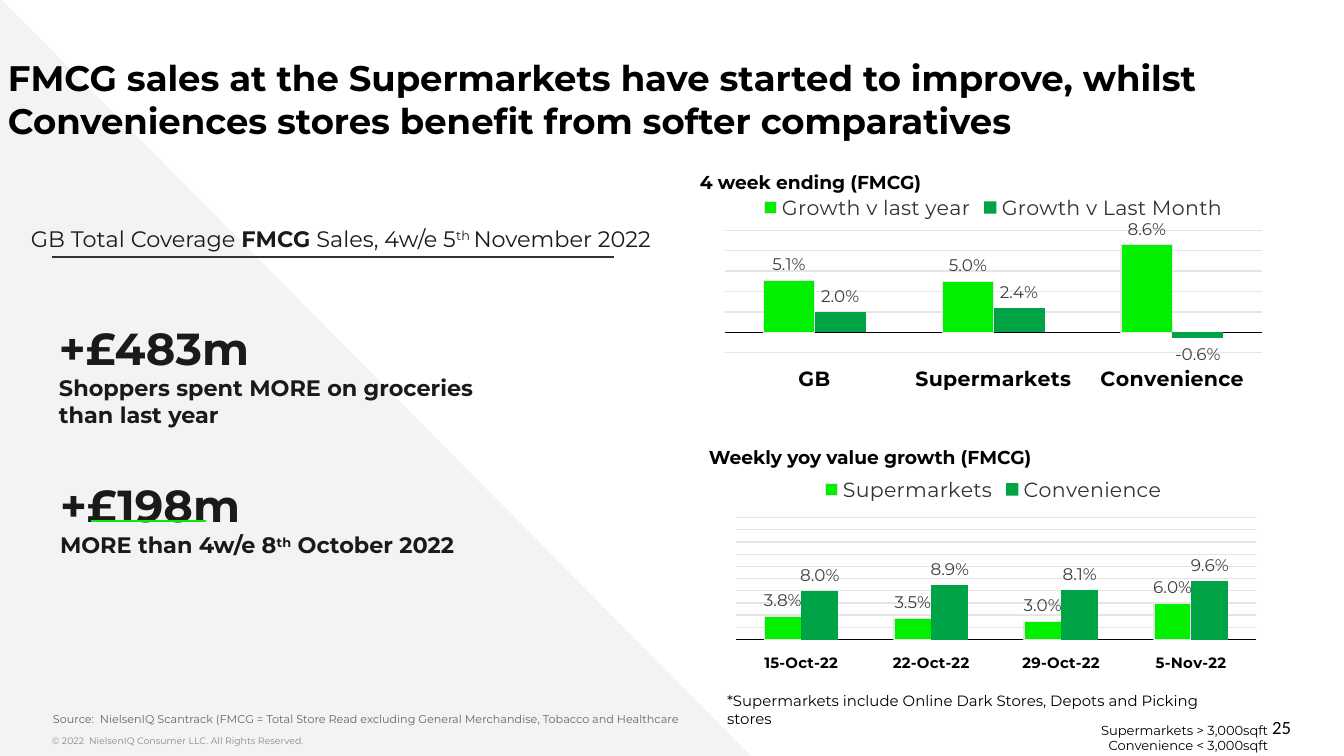
"""Build the FMCG sales slide: headline figures on the left, two growth charts on the right."""
import pptx
import pptx.chart.data
import pptx.dml.color
import pptx.enum.chart
import pptx.enum.shapes
import pptx.enum.text
import pptx.oxml
import pptx.oxml.ns
import pptx.util
from lxml import etree

SCALE = 914400 / 134.4
RGB = pptx.dml.color.RGBColor
BLACK = RGB(0x00, 0x00, 0x00)
INK = RGB(0x1A, 0x1A, 0x1A)
CHARCOAL = RGB(0x33, 0x33, 0x33)
LABEL = RGB(0x40, 0x40, 0x40)
SOURCE = RGB(0x66, 0x66, 0x66)
COPYRIGHT = RGB(0x88, 0x88, 0x88)
GRID = RGB(0xE5, 0xE5, 0xE5)
PALE = RGB(0xF3, 0xF3, 0xF3)
LIME = RGB(0x00, 0xF0, 0x00)
GREEN = RGB(0x00, 0xA3, 0x46)
TOP = pptx.enum.text.MSO_ANCHOR.TOP
MIDDLE = pptx.enum.text.MSO_ANCHOR.MIDDLE
LEFT = pptx.enum.text.PP_ALIGN.LEFT
RIGHT = pptx.enum.text.PP_ALIGN.RIGHT
SUPER = "super"


def px(*lengths):
    return [pptx.util.Emu(round(length * SCALE)) for length in lengths]


def set_font(font, size, color, bold=False, name="Montserrat"):
    values = {"size": pptx.util.Pt(size), "bold": bold, "name": name}
    for key, value in values.items():
        setattr(font, key, value)
    font.color.rgb = color


deck = pptx.Presentation()
deck.slide_width, deck.slide_height = px(1344, 756)
page = deck.slides.add_slide(deck.slide_layouts[6])

triangle = page.shapes.add_shape(
    pptx.enum.shapes.MSO_SHAPE.RIGHT_TRIANGLE, *px(0, -2, 751, 758))
triangle.shadow.inherit = False
triangle.fill.solid()
triangle.fill.fore_color.rgb = PALE
triangle.line.fill.background()

charts = [
    {
        "place": (714, 179, 559, 218),
        "categories": ["GB", "Supermarkets", "Convenience"],
        "series": [("Growth v last year", [0.051, 0.05, 0.086]),
                   ("Growth v Last Month", [0.02, 0.024, -0.006])],
        "category size": 11, "maximum": None, "plot": {},
    },
    {
        "place": (714, 461, 559, 218),
        "categories": ["15-Oct-22", "22-Oct-22", "29-Oct-22", "5-Nov-22"],
        "series": [("Supermarkets", [0.038, 0.035, 0.03, 0.06]),
                   ("Convenience", [0.08, 0.089, 0.081, 0.096])],
        "category size": 8, "maximum": 0.2,
        "plot": {"x": 0.04, "y": 0.26, "w": 0.93, "h": 0.56},
    },
]
for item in charts:
    data = pptx.chart.data.CategoryChartData(number_format="0.0%")
    data.categories = item["categories"]
    for name, values in item["series"]:
        data.add_series(name, values)
    chart = page.shapes.add_chart(
        pptx.enum.chart.XL_CHART_TYPE.COLUMN_CLUSTERED, *px(*item["place"]), data).chart
    set_font(chart.font, 10, BLACK, name="Arial")
    chart.has_title = False
    chart.has_legend = True
    chart.legend.position = pptx.enum.chart.XL_LEGEND_POSITION.TOP
    chart.legend.include_in_layout = False
    set_font(chart.legend.font, 11, CHARCOAL)

    category = chart.category_axis
    category.tick_label_position = pptx.enum.chart.XL_TICK_LABEL_POSITION.LOW
    category.major_tick_mark = pptx.enum.chart.XL_TICK_MARK.NONE
    category.format.line.color.rgb = BLACK
    category.format.line.width = pptx.util.Pt(0.75)
    set_font(category.tick_labels.font, item["category size"], BLACK, True)

    value_axis = chart.value_axis
    value_axis.visible = False
    value_axis.maximum_scale = item["maximum"]
    value_axis.major_gridlines.format.line.color.rgb = GRID
    value_axis.major_gridlines.format.line.width = pptx.util.Pt(0.75)

    plot = chart.plots[0]
    plot.vary_by_categories = False
    plot.gap_width = 150
    plot.overlap = 0
    for series, color in zip(plot.series, (LIME, GREEN)):
        series.invert_if_negative = False
        series.format.fill.solid()
        series.format.fill.fore_color.rgb = color
        labels = series.data_labels
        settings = {"show_value": True, "number_format": "0.0%",
                    "number_format_is_linked": False,
                    "position": pptx.enum.chart.XL_LABEL_POSITION.OUTSIDE_END}
        for key, value in settings.items():
            setattr(labels, key, value)
        set_font(labels.font, 9, LABEL)
    plot.series[0].format.line.color.rgb = GRID
    plot.series[0].format.line.width = pptx.util.Pt(0.75)

    if item["plot"]:
        area = chart.plots[0]._element.getparent()
        for old in area.findall(pptx.oxml.ns.qn("c:layout")):
            area.remove(old)
        layout = etree.Element(pptx.oxml.ns.qn("c:layout"))
        manual = etree.SubElement(layout, pptx.oxml.ns.qn("c:manualLayout"))
        parts = {"layoutTarget": "inner", "xMode": "edge", "yMode": "edge", **item["plot"]}
        for tag, value in parts.items():
            etree.SubElement(manual, pptx.oxml.ns.qn(f"c:{tag}")).set("val", str(value))
        area.insert(0, layout)

texts = [
    {"place": (52, 730, 745, 27), "inset": (0, 7, 0, 7), "size": 5, "color": COPYRIGHT,
     "lines": [[("© 2022  NielsenIQ Consumer LLC. All Rights Reserved.",)]]},
    {"place": (989, 707, 302, 40), "inset": (0, 7, 0, 7), "size": 10, "font": "Calibri",
     "anchor": MIDDLE, "align": RIGHT, "lines": [[("25",)]]},
    {"place": (8, 43, 1328, 59), "inset": (0, 13, 0, 13), "size": 19, "bold": True,
     "lines": [[("FMCG sales at the Supermarkets have started to improve, whilst "
                 "Conveniences stores benefit from softer comparatives",)]]},
    {"place": (31, 706, 1199, 27), "inset": (22, 13, 0, 13), "size": 6, "color": SOURCE,
     "lines": [[("Source:  NielsenIQ Scantrack (FMCG = Total Store Read excluding "
                 "General Merchandise, Tobacco and Healthcare",)]]},
    {"place": (714, 685, 528, 50), "size": 8,
     "lines": [[("*Supermarkets include Online Dark Stores, Depots and Picking stores",)]]},
    {"place": (31, 218, 685, 36), "inset": (0, 7, 0, 7), "size": 12, "color": INK,
     "lines": [[("GB Total Coverage ",), ("FMCG", "bold"), (" Sales, 4w/e 5",),
                ("th ", SUPER), ("November 2022",)]]},
    {"place": (59, 331, 426, 87), "inset": (0, 0, 0, 0), "size": 12, "bold": True,
     "color": INK, "anchor": MIDDLE,
     "lines": [[("+£483m", "large")],
               [("Shoppers spent MORE on groceries than last year",)]]},
    {"place": (60, 488, 464, 87), "inset": (0, 0, 0, 27), "size": 12, "bold": True,
     "color": INK, "anchor": MIDDLE,
     "lines": [[("+£198m", "large")],
               [("MORE than 4w/e 8",), ("th", SUPER), (" October 2022",)]]},
    {"place": (882, 715, 399, 46), "size": 7, "align": RIGHT,
     "lines": [[("Supermarkets > 3,000sqft",)], [("Convenience < 3,000sqft",)]]},
    {"place": (696, 439, 363, 36), "size": 10, "bold": True, "wrap": False,
     "lines": [[("Weekly yoy value growth (FMCG)",)]]},
    {"place": (687, 164, 251, 36), "size": 10, "bold": True, "wrap": False,
     "lines": [[("4 week ending (FMCG)",)]]},
]
for item in texts:
    box = page.shapes.add_textbox(*px(*item["place"]))
    frame = box.text_frame
    left, top, right, bottom = px(*item.get("inset", (13, 7, 13, 7)))
    settings = {"word_wrap": item.get("wrap", True),
                "vertical_anchor": item.get("anchor", TOP),
                "margin_left": left, "margin_top": top,
                "margin_right": right, "margin_bottom": bottom}
    for key, value in settings.items():
        setattr(frame, key, value)
    for index, line in enumerate(item["lines"]):
        para = frame.add_paragraph() if index else frame.paragraphs[0]
        para.alignment = item.get("align", LEFT)
        for words, *styles in line:
            span = para.add_run()
            span.text = words
            set_font(span.font, 24 if "large" in styles else item["size"],
                     item.get("color", BLACK),
                     item.get("bold", False) or "bold" in styles,
                     item.get("font", "Montserrat"))
            if SUPER in styles:
                span._r.get_or_add_rPr().set("baseline", "30000")

rules = [((52, 257, 614, 257), CHARCOAL, 0.75), ((91, 521, 206, 521), LIME, 1.5)]
for ends, color, width in rules:
    rule = page.shapes.add_connector(
        pptx.enum.shapes.MSO_CONNECTOR.STRAIGHT, *px(*ends))
    rule.line.color.rgb = color
    rule.line.width = pptx.util.Pt(width)
    etree.SubElement(rule._element.spPr, pptx.oxml.ns.qn("a:effectLst"))

deck.save("out.pptx")
